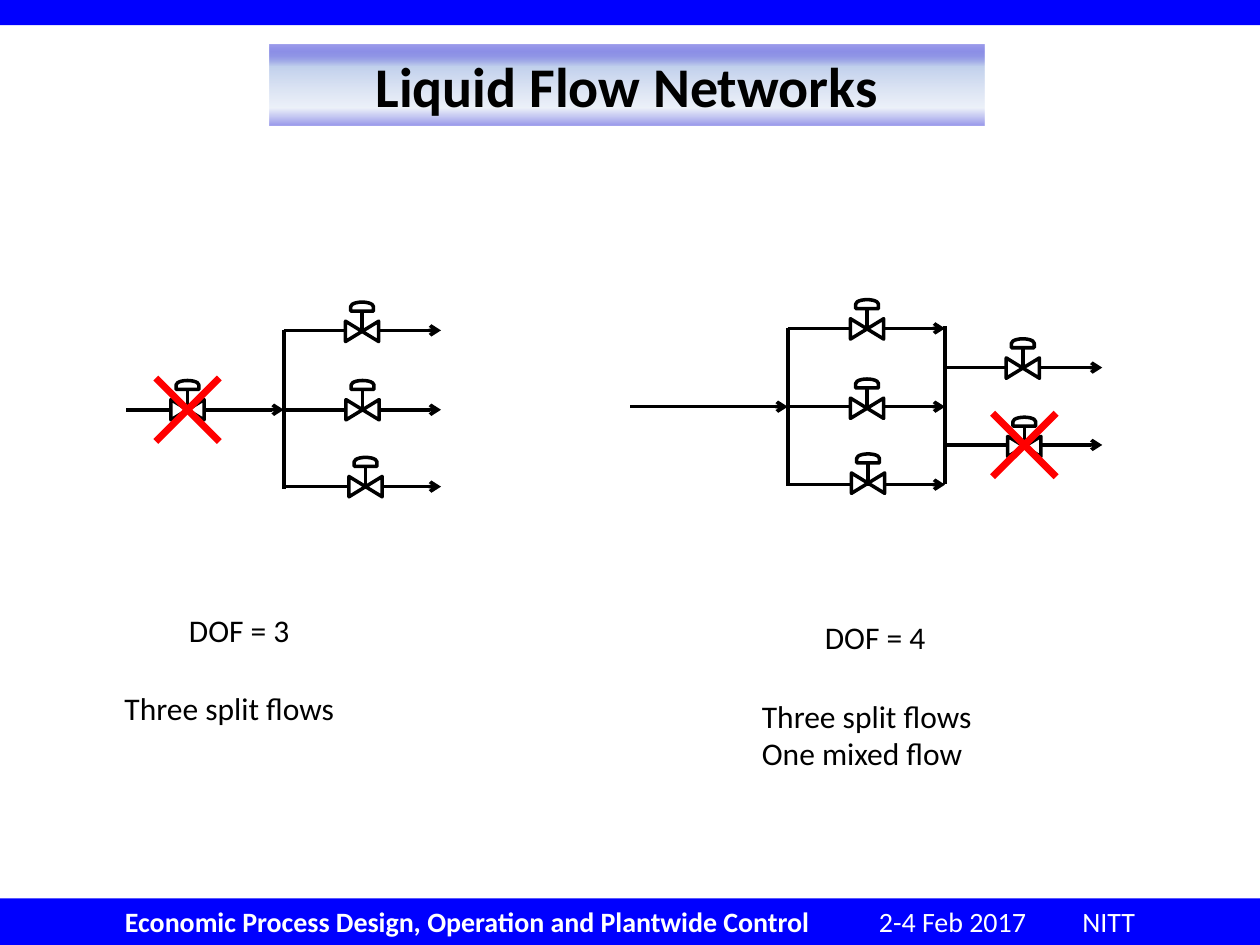
from lxml.etree import SubElement
from pptx import Presentation
from pptx.dml.color import RGBColor
from pptx.enum.shapes import MSO_CONNECTOR, MSO_SHAPE
from pptx.enum.text import MSO_ANCHOR, MSO_AUTO_SIZE, PP_ALIGN
from pptx.oxml.ns import qn
from pptx.util import Cm, Pt

BLACK = RGBColor(0x00, 0x00, 0x00)
WHITE = RGBColor(0xFF, 0xFF, 0xFF)
BLUE = RGBColor(0x00, 0x00, 0xFF)
RED = RGBColor(0xFF, 0x00, 0x00)
NAVY = RGBColor(0x00, 0x00, 0xCC)
PALE_BLUE = RGBColor(0xC2, 0xD1, 0xED)
PALER_BLUE = RGBColor(0xD2, 0xDD, 0xF1)

# Position %, colour, opacity %
TITLE_STOPS = [(1, NAVY, 39), (27, PALE_BLUE, 100), (78, PALER_BLUE, 40), (100, NAVY, 40)]

TITLE_FONT = {"name": "Calibri", "size": Pt(32), "bold": True}
FOOTER_FONT = {"name": "Calibri", "size": Pt(16)}
NOTE_FONT = {"name": "Calibri", "size": Pt(18), "bold": False}

# Each network in cm: flows are (x1, x2, y), headers (x, y1, y2), the rest centres
SPLIT_NETWORK = {
    "flows": [(2.54, 5.72, 8.26)] + [(5.72, 8.89, y) for y in (6.66, 8.26, 9.81)],
    "headers": [(5.72, 6.66, 9.85)],
    "valves": [(7.3, 6.68), (7.31, 8.26), (7.37, 9.81), (3.78, 8.26)],
    "cross": (3.78, 8.26),
}
SPLIT_AND_MIX_NETWORK = {
    "flows": [(12.7, 15.88, 8.2)]
    + [(15.88, 19.05, y) for y in (6.62, 8.2, 9.77)]
    + [(19.05, 22.22, y) for y in (7.41, 8.97)],
    "headers": [(15.88, 6.62, 9.8), (19.05, 6.58, 9.76)],
    "valves": [(17.48, 6.63), (17.48, 8.23), (17.5, 9.74), (20.62, 7.42), (20.65, 9.0)],
    "cross": (20.65, 8.97),
}


def add_run(paragraph, text, font_format, color):
    run = paragraph.add_run()
    run.text = text
    for name, value in font_format.items():
        setattr(run.font, name, value)
    run.font.color.rgb = color


def add_line(shapes, start, end, color=BLACK, width=2, arrow=False):
    points = [Cm(value) for value in (*start, *end)]
    line = shapes.add_connector(MSO_CONNECTOR.STRAIGHT, *points)
    line.line.color.rgb = color
    line.line.width = Pt(width)
    properties = line.element.spPr
    if arrow:
        SubElement(properties.find(qn("a:ln")), qn("a:tailEnd"), type="arrow")
    SubElement(properties, qn("a:effectLst"))


def add_valve_part(shapes, kind, center, size, fill=None):
    """Add a preset shape turned a quarter to the left about its centre."""
    (x, y), (width, height) = center, size
    shape = shapes.add_shape(
        kind, Cm(x - width / 2), Cm(y - height / 2), Cm(width), Cm(height)
    )
    shape.rotation = 270
    shape.shadow.inherit = False
    shape.line.color.rgb = BLACK
    shape.line.width = Pt(2)
    if fill is None:
        shape.fill.background()
    else:
        shape.fill.solid()
        shape.fill.fore_color.rgb = fill


def add_valve(slide, x, y):
    shapes = slide.shapes.add_group_shape().shapes
    add_valve_part(shapes, MSO_SHAPE.FLOWCHART_COLLATE, (x, y), (0.41, 0.67), WHITE)
    add_valve_part(shapes, MSO_SHAPE.FLOWCHART_DELAY, (x, y - 0.5), (0.18, 0.46))
    add_line(shapes, (x, y), (x, y - 0.41))


def add_cross(slide, x, y, reach=0.64):
    shapes = slide.shapes.add_group_shape().shapes
    for side in (reach, -reach):
        add_line(shapes, (x - side, y - reach), (x + side, y + reach), RED, 4)


def add_network(slide, network):
    pipes = slide.shapes.add_group_shape().shapes
    for x1, x2, y in network["flows"]:
        add_line(pipes, (x1, y), (x2, y), arrow=True)
    for x, y1, y2 in network["headers"]:
        add_line(pipes, (x, y1), (x, y2))
    for center in network["valves"]:
        add_valve(slide, *center)
    add_cross(slide, *network["cross"])


def add_note(slide, lines, left, top, width, height):
    box = slide.shapes.add_textbox(Cm(left), Cm(top), Cm(width), Cm(height))
    frame = box.text_frame
    frame.word_wrap = False
    frame.auto_size = MSO_AUTO_SIZE.SHAPE_TO_FIT_TEXT
    for index, text in enumerate(lines):
        paragraph = frame.add_paragraph() if index else frame.paragraphs[0]
        add_run(paragraph, text, NOTE_FONT, BLACK)


def add_bar(slide, top, height):
    bar = slide.shapes.add_shape(MSO_SHAPE.RECTANGLE, 0, Cm(top), Cm(25.4), Cm(height))
    bar.shadow.inherit = False
    bar.fill.solid()
    bar.fill.fore_color.rgb = BLUE
    bar.line.fill.background()
    return bar


def add_footer(slide):
    frame = add_bar(slide, 18.11, 0.94).text_frame
    frame.margin_left = Cm(2.52)
    frame.margin_right = 0
    frame.vertical_anchor = MSO_ANCHOR.MIDDLE
    paragraph = frame.paragraphs[0]
    paragraph.alignment = PP_ALIGN.LEFT
    # Tab stops for the date and the place
    tabs = SubElement(paragraph._p.get_or_add_pPr(), qn("a:tabLst"))
    for position in (15.2, 19.3):
        SubElement(tabs, qn("a:tab"), pos=str(Cm(position)), algn="l")
    course = "Economic Process Design, Operation and Plantwide Control"
    add_run(paragraph, course, {**FOOTER_FONT, "bold": True}, WHITE)
    add_run(paragraph, "\t2-4 Feb 2017\tNITT", {**FOOTER_FONT, "bold": False}, WHITE)


def fill_with_gradient(shape, stops):
    shape.fill.gradient()
    gradient = shape.element.spPr.find(qn("a:gradFill"))
    stop_list = gradient.find(qn("a:gsLst"))
    for old_stop in list(stop_list):
        stop_list.remove(old_stop)
    for position, color, opacity in stops:
        stop = SubElement(stop_list, qn("a:gs"), pos=str(position * 1000))
        shade = SubElement(stop, qn("a:srgbClr"), val=str(color))
        SubElement(shade, qn("a:alpha"), val=str(opacity * 1000))
    gradient.find(qn("a:lin")).set("ang", "5400000")


def set_title(slide, text):
    title = slide.shapes.title
    place = {"left": 5.43, "top": 0.9, "width": 14.41, "height": 1.63}
    for name, value in place.items():
        setattr(title, name, Cm(value))
    fill_with_gradient(title, TITLE_STOPS)
    frame = title.text_frame
    frame.vertical_anchor = MSO_ANCHOR.MIDDLE
    frame.auto_size = MSO_AUTO_SIZE.NONE
    paragraph = frame.paragraphs[0]
    paragraph.alignment = PP_ALIGN.CENTER
    add_run(paragraph, text, TITLE_FONT, BLACK)


def main():
    presentation = Presentation()
    presentation.slide_width = Cm(25.4)
    presentation.slide_height = Cm(19.05)
    slide = presentation.slides.add_slide(presentation.slide_layouts[5])

    # Frame and title
    add_bar(slide, 0, 0.51)
    add_footer(slide)
    set_title(slide, "Liquid Flow Networks")

    # Split flows only
    add_network(slide, SPLIT_NETWORK)
    add_note(slide, ["DOF = 3"], 3.56, 12.19, 2.57, 1.02)
    add_note(slide, ["Three split flows"], 2.26, 13.77, 4.8, 1.02)

    # Split flows followed by mixing
    add_network(slide, SPLIT_AND_MIX_NETWORK)
    add_note(slide, ["DOF = 4"], 16.38, 12.34, 2.57, 1.02)
    add_note(slide, ["Three split flows", "One mixed flow"], 15.11, 13.92, 4.8, 1.8)

    presentation.save("out.pptx")


if __name__ == "__main__":
    main()
